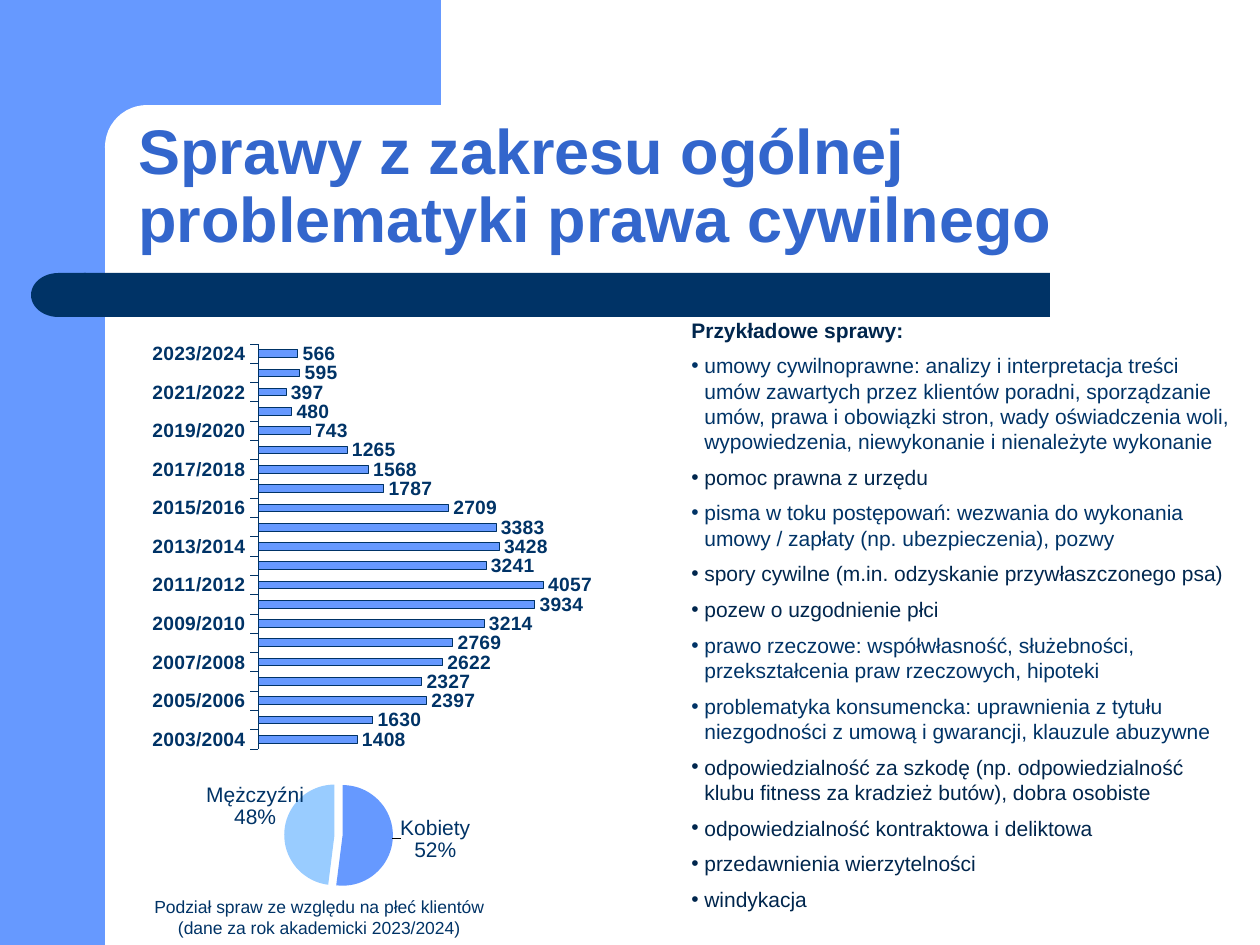
from dataclasses import dataclass

from lxml.etree import SubElement
from pptx import Presentation
from pptx.chart.data import CategoryChartData
from pptx.dml.color import RGBColor
from pptx.enum.chart import XL_CHART_TYPE as Chart, XL_LABEL_POSITION as LabelPos
from pptx.enum.chart import XL_TICK_LABEL_POSITION as TickLabels, XL_TICK_MARK as Tick
from pptx.enum.shapes import MSO_SHAPE as Preset
from pptx.enum.text import MSO_ANCHOR as Anchor, PP_ALIGN as Align
from pptx.oxml import parse_xml
from pptx.oxml.ns import nsdecls, qn
from pptx.util import Emu, Pt


@dataclass(frozen=True)
class Theme:
    font: str = "Arial"
    blue: str = "6699FF"
    sky: str = "99CCFF"
    navy: str = "003366"
    ink: str = "00264D"
    heading: str = "3366CC"
    white: str = "FFFFFF"
    title_size: int = 36
    body_size: int = 12
    axis_size: int = 11
    caption_size: int = 10


THEME = Theme()
PX_PER_INCH = 126
FIRST_YEAR = 2003
CASES = [1408, 1630, 2397, 2327, 2622, 2769, 3214, 3934, 4057, 3241, 3428,
         3383, 2709, 1787, 1568, 1265, 743, 480, 397, 595, 566]
CLIENTS = {"Kobiety": 52, "Mężczyźni": 48}
TITLE = "Sprawy z zakresu ogólnej problematyki prawa cywilnego"
CAPTION = "Podział spraw ze względu na płeć klientów (dane za rok akademicki 2023/2024)"
EXAMPLES_HEADING = "Przykładowe sprawy:"
EXAMPLES = [
    ("umowy cywilnoprawne: analizy i interpretacja treści umów zawartych przez "
     "klientów poradni, sporządzanie umów, prawa i obowiązki stron, wady "
     "oświadczenia woli, wypowiedzenia, niewykonanie i nienależyte wykonanie", THEME.navy),
    ("pomoc prawna z urzędu", THEME.ink),
    ("pisma w toku postępowań: wezwania do wykonania umowy / zapłaty "
     "(np. ubezpieczenia), pozwy", THEME.navy),
    ("spory cywilne (m.in. odzyskanie przywłaszczonego psa)", THEME.ink),
    ("pozew o uzgodnienie płci", THEME.ink),
    ("prawo rzeczowe: współwłasność, służebności, przekształcenia praw "
     "rzeczowych, hipoteki", THEME.navy),
    ("problematyka konsumencka: uprawnienia z tytułu niezgodności z umową "
     "i gwarancji, klauzule abuzywne", THEME.navy),
    ("odpowiedzialność za szkodę (np. odpowiedzialność klubu fitness za "
     "kradzież butów), dobra osobiste", THEME.ink),
    ("odpowiedzialność kontraktowa i deliktowa", THEME.ink),
    ("przedawnienia wierzytelności", THEME.ink),
    ("windykacja", THEME.ink),
]


def px(length):
    return Emu(round(length * 914400 / PX_PER_INCH))


def box(*lengths):
    return [px(length) for length in lengths]


def assign(target, **values):
    for name, value in values.items():
        setattr(target, name, value)


def set_font(font, size, color, bold=False):
    assign(font, name=THEME.font, size=Pt(size), bold=bold)
    font.color.rgb = RGBColor.from_string(color)


def paint(fill, color):
    fill.solid()
    fill.fore_color.rgb = RGBColor.from_string(color)


def outline(line, color, width):
    line.color.rgb = RGBColor.from_string(color)
    line.width = Pt(width)


def add_panel(slide, preset, place, color, rounding=None, mirrored=False):
    panel = slide.shapes.add_shape(preset, *box(*place))
    panel.shadow.inherit = False
    paint(panel.fill, color)
    panel.line.fill.background()
    if rounding is not None:
        panel.adjustments[0] = rounding
    if mirrored:
        panel._element.spPr.xfrm.set("flipH", "1")


def add_text_frame(slide, place, anchor=Anchor.TOP):
    frame = slide.shapes.add_textbox(*box(*place)).text_frame
    assign(frame, word_wrap=True, vertical_anchor=anchor)
    return frame


def write(paragraph, text, size, color, bold=False, **spacing):
    run = paragraph.add_run()
    run.text = text
    set_font(run.font, size, color, bold)
    assign(paragraph, **spacing)


def add_bullet(paragraph, indent=13):
    props = paragraph._p.get_or_add_pPr()
    props.set("marL", str(px(indent)))
    props.set("indent", str(-px(indent)))
    SubElement(props, qn("a:buFont")).set("typeface", THEME.font)
    SubElement(props, qn("a:buChar")).set("char", "•")


def add_chart(slide, kind, place, values, plot_area):
    data = CategoryChartData()
    data.categories = list(values)
    data.add_series("Series 1", list(values.values()))
    chart = slide.shapes.add_chart(kind, *box(*place), data).chart
    assign(chart, has_legend=False, has_title=False)
    set_font(chart.font, THEME.body_size, THEME.navy)
    set_layout(chart._chartSpace.chart.plotArea, inner=True, **plot_area)
    return chart


def set_layout(parent, inner=False, **fractions):
    """Place a plot area or a data label by fractions of the chart."""
    for old in parent.findall(qn("c:layout")):
        parent.remove(old)
    modes = '<c:layoutTarget val="inner"/><c:xMode val="edge"/><c:yMode val="edge"/>' if inner else ""
    sizes = "".join(f'<c:{key} val="{value}"/>' for key, value in fractions.items())
    layout = parse_xml(f'<c:layout {nsdecls("c")}><c:manualLayout>{modes}{sizes}'
                       '</c:manualLayout></c:layout>')
    parent.insert(0 if inner else 1, layout)


def add_cases_chart(slide):
    cases = {f"{year}/{year + 1}": count for year, count in enumerate(CASES, FIRST_YEAR)}
    chart = add_chart(slide, Chart.BAR_CLUSTERED, (105, 306, 546, 471), cases,
                      dict(x=0.28, y=0.08, w=0.58, h=0.86))
    plot = chart.plots[0]
    assign(plot, gap_width=150, vary_by_categories=False, has_data_labels=True)
    assign(plot.data_labels, show_value=True, position=LabelPos.OUTSIDE_END)
    set_font(plot.data_labels.font, THEME.axis_size, THEME.navy, bold=True)
    bars = plot.series[0].format
    paint(bars.fill, THEME.blue)
    outline(bars.line, THEME.navy, 0.25)
    assign(chart.value_axis, visible=False, has_major_gridlines=False,
           minimum_scale=0, maximum_scale=4500)
    years = chart.category_axis
    assign(years, major_tick_mark=Tick.OUTSIDE, minor_tick_mark=Tick.NONE,
           has_major_gridlines=False, tick_label_position=TickLabels.LOW)
    set_font(years.tick_labels.font, THEME.axis_size, THEME.navy, bold=True)
    outline(years.format.line, THEME.navy, 0.15)


def add_clients_chart(slide):
    chart = add_chart(slide, Chart.PIE, (52, 760, 546, 149), CLIENTS,
                      dict(x=0.42, y=0.14, w=0.21, h=0.73))
    women_men = chart.plots[0].series[0]
    women_men._element.get_or_add_dLbls()
    label_shifts = [(0, 0), (0.05, -0.17)]
    for index, (color, shift) in enumerate(zip((THEME.blue, THEME.sky), label_shifts)):
        point = women_men.points[index]
        paint(point.format.fill, color)
        point.format.line.fill.background()
        slice_props = point.format._element if hasattr(point.format, "_element") else None
        label = point.data_label
        set_font(label.font, THEME.body_size, THEME.navy)
        label.position = LabelPos.OUTSIDE_END
        entry = women_men._element.find(qn("c:dLbls")).findall(qn("c:dLbl"))[index]
        for flag, shown in dict(showVal=0, showCatName=1, showPercent=1).items():
            entry.find(qn(f"c:{flag}")).set("val", str(shown))
        SubElement(entry, qn("c:separator")).text = "\n"
        set_layout(entry, x=shift[0], y=shift[1])
    explosion = parse_xml(f'<c:explosion {nsdecls("c")} val="8"/>')
    women_men._element.find(qn("c:dPt")).addprevious(explosion)


def main():
    deck = Presentation()
    assign(deck, slide_width=px(1260), slide_height=px(945))
    slide = deck.slides.add_slide(deck.slide_layouts[6])
    paint(slide.background.fill, THEME.white)

    # Blue corner, rounded sheet and dark band
    add_panel(slide, Preset.RECTANGLE, (0, 0, 105, 945), THEME.blue)
    add_panel(slide, Preset.RECTANGLE, (95, 0, 346, 147), THEME.blue)
    add_panel(slide, Preset.ROUNDED_RECTANGLE, (105, 105, 703, 84), THEME.white, rounding=0.5)
    add_panel(slide, Preset.ROUNDED_RECTANGLE, (84, 273, 966, 44), THEME.navy, rounding=0)
    add_panel(slide, Preset.FLOWCHART_DELAY, (31, 273, 55, 44), THEME.navy, mirrored=True)

    # Title
    title = add_text_frame(slide, (126, 105, 1102, 157), Anchor.BOTTOM)
    write(title.paragraphs[0], TITLE, THEME.title_size, THEME.heading, True, line_spacing=0.9)

    # Example cases
    examples = add_text_frame(slide, (679, 311, 566, 636))
    write(examples.paragraphs[0], EXAMPLES_HEADING, THEME.body_size, THEME.ink, True,
          space_before=Pt(6))
    for text, color in EXAMPLES:
        example = examples.add_paragraph()
        write(example, text, THEME.body_size, color, space_before=Pt(6))
        add_bullet(example)

    # Charts and caption
    add_cases_chart(slide)
    add_clients_chart(slide)
    caption = add_text_frame(slide, (123, 890, 392, 55))
    write(caption.paragraphs[0], CAPTION, THEME.caption_size, THEME.navy,
          alignment=Align.CENTER, space_before=Pt(5))

    deck.save("out.pptx")


if __name__ == "__main__":
    main()
